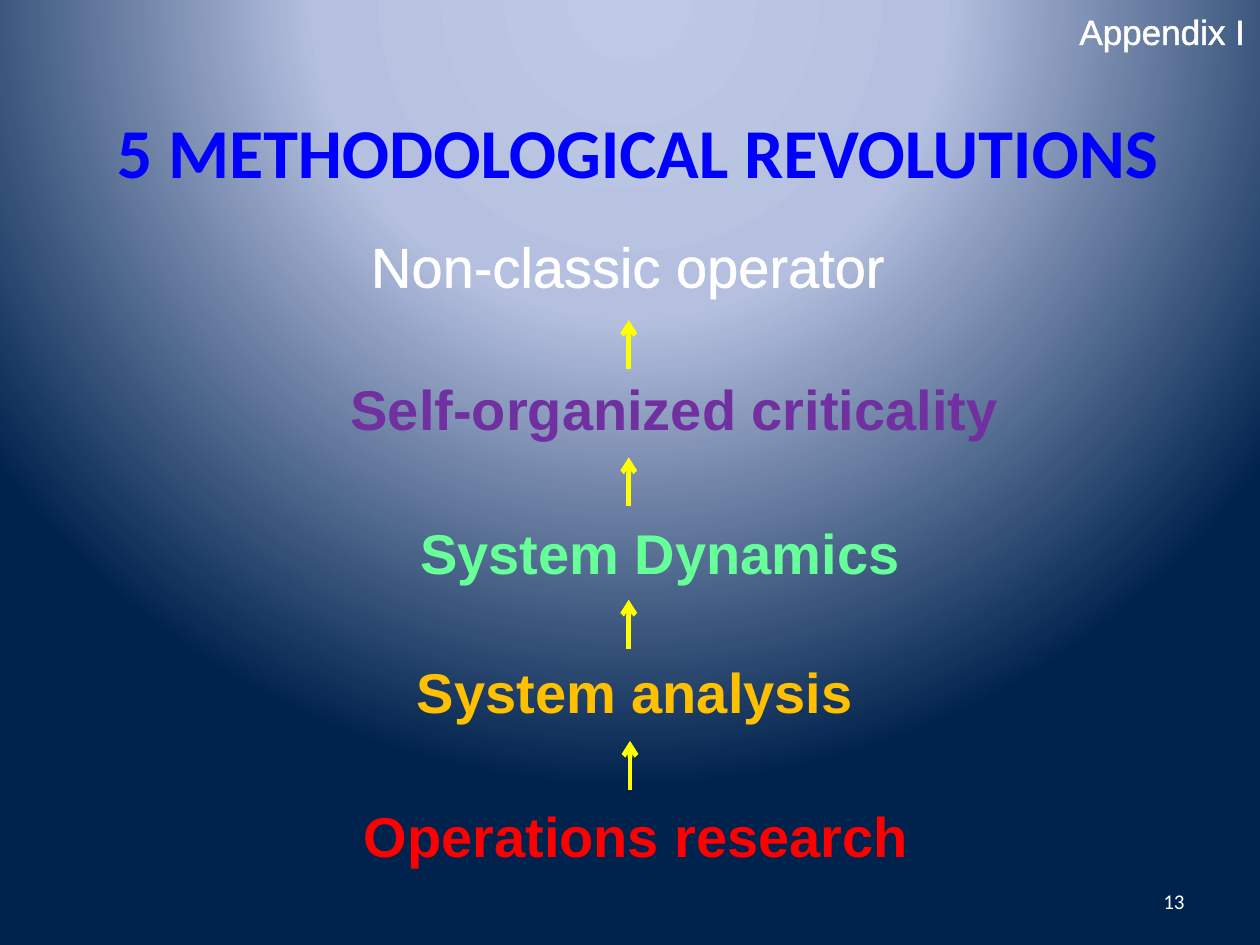
from lxml.etree import SubElement
from pptx import Presentation
from pptx.dml.color import RGBColor
from pptx.enum.shapes import MSO_CONNECTOR
from pptx.enum.text import MSO_ANCHOR, PP_ALIGN
from pptx.oxml import parse_xml
from pptx.oxml.ns import nsdecls, qn
from pptx.util import Inches, Pt

COLUMNS, ROWS = 100, 75
CELL = Inches(0.1)
ARROW_HEIGHT = 3.9
ARROWS = [(50, 58.8), (49.9, 47.6), (49.9, 36.3), (49.9, 25.4)]
STAGES = [
    ("Non-classic operator", (16.4, 18.6, 66.9, 4.9), "FFFFFF", False, ("FFFFFF", 1.45)),
    ("Self-organized criticality", (11.4, 27.3, 84.3, 10.2), "7030A0", True, None),
    ("System Dynamics", (20.9, 39.1, 63, 9.4), "66FF99", True, None),
    ("System analysis", (24, 51.7, 52.8, 6.3), "FFC000", True, None),
    ("Operations research", (2.5, 63.5, 96, 5.5), "FF0000", True, None),
]
GLOW_STOPS = [(0, "BFC9E5"), (40, "B5C0E0"), (100, "00234D")]


def grid(*cells):
    """Turn numbers of grid cells into slide lengths."""
    return [round(cell * CELL) for cell in cells]


def color(code):
    """Turn a hex string into a colour."""
    return RGBColor.from_string(code)


def paint_background(slide):
    """Fill the slide with a circular glow centred above its top edge."""
    stops = "".join(
        f'<a:gs pos="{share * 1000}"><a:srgbClr val="{code}"/></a:gs>'
        for share, code in GLOW_STOPS
    )
    slide.background.fill.solid()
    properties = slide.element.find(".//" + qn("p:bgPr"))
    properties.replace(properties[0], parse_xml(
        f'<a:gradFill {nsdecls("a")} rotWithShape="1"><a:gsLst>{stops}</a:gsLst>'
        '<a:path path="circle"><a:fillToRect l="50000" t="-80000" r="50000" b="180000"/>'
        "</a:path></a:gradFill>"
    ))


def style_font(font, size, code, name, bold):
    """Set the look of a run or paragraph font."""
    font.size, font.name, font.bold = Pt(size), name, bold
    font.color.rgb = color(code)


def outline_span(span, code, width):
    """Draw a thin line around the letters of a run."""
    span.font._element.insert(0, parse_xml(
        f'<a:ln {nsdecls("a")} w="{Pt(width)}"><a:solidFill>'
        f'<a:srgbClr val="{code}"/></a:solidFill></a:ln>'
    )) if hasattr(span.font, "_element") else span._r.get_or_add_rPr().insert(0, parse_xml(
        f'<a:ln {nsdecls("a")} w="{Pt(width)}"><a:solidFill>'
        f'<a:srgbClr val="{code}"/></a:solidFill></a:ln>'
    ))


def write_text(box, text, size, code, name="Arial", bold=False,
               align=PP_ALIGN.CENTER, outline=None):
    """Write one styled line into a box."""
    frame = box.text_frame
    frame.word_wrap = True
    frame.vertical_anchor = MSO_ANCHOR.MIDDLE
    para = frame.paragraphs[0]
    para.alignment = align
    span = para.add_run()
    span.text = text
    style_font(span.font, size, code, name, bold)
    if outline:
        outline_span(span, *outline)
    return span


def add_title(slide, text):
    """Move the title placeholder and fill it."""
    title = slide.shapes.title
    title.left, title.top, title.width, title.height = grid(1.2, 8.4, 98.8, 7.1)
    write_text(title, text, 40, "0000FF", "Calibri", True, outline=("5E457C", 0.71))


def add_label(slide, place, text, size, code, **style):
    """Add a text box on the grid."""
    box = slide.shapes.add_textbox(*grid(*place))
    return write_text(box, text, size, code, **style)


def add_page_number(slide, number):
    """Add a slide number field at the bottom right."""
    span = add_label(slide, (71.7, 69.5, 23.3, 4), number, 12, "FFFFFF",
                     name="Calibri", align=PP_ALIGN.RIGHT)
    run = span._r
    run.tag = qn("a:fld")
    run.set("id", "{B6F15528-21DE-4FAA-801E-634DDDAF4B2B}")
    run.set("type", "slidenum")


def add_arrow(slide, column, row):
    """Add an upward arrow whose tip is at the given cell."""
    arrow = slide.shapes.add_connector(
        MSO_CONNECTOR.STRAIGHT, *grid(column, row + ARROW_HEIGHT, column, row))
    arrow.line.color.rgb = color("FFFF00")
    arrow.line.width = Pt(2.75)
    SubElement(arrow.line._get_or_add_ln(), qn("a:tailEnd"), type="arrow")
    SubElement(arrow._element.spPr, qn("a:effectLst"))


def main():
    """Build the slide and save it."""
    deck = Presentation()
    deck.slide_width, deck.slide_height = grid(COLUMNS, ROWS)
    deck.element.set("firstSlideNum", "13")
    slide = deck.slides.add_slide(deck.slide_layouts[5])
    paint_background(slide)
    add_title(slide, "5 METHODOLOGICAL REVOLUTIONS")
    for column, row in ARROWS:
        add_arrow(slide, column, row)
    for text, place, code, bold, outline in STAGES:
        add_label(slide, place, text, 32, code, bold=bold, outline=outline)
    add_page_number(slide, "13")
    add_label(slide, (49, 0, 50.8, 4.9), "Appendix I", 20, "FFFFFF",
              align=PP_ALIGN.RIGHT, outline=("FFFFFF", 1.45))
    deck.save("out.pptx")


if __name__ == "__main__":
    main()
